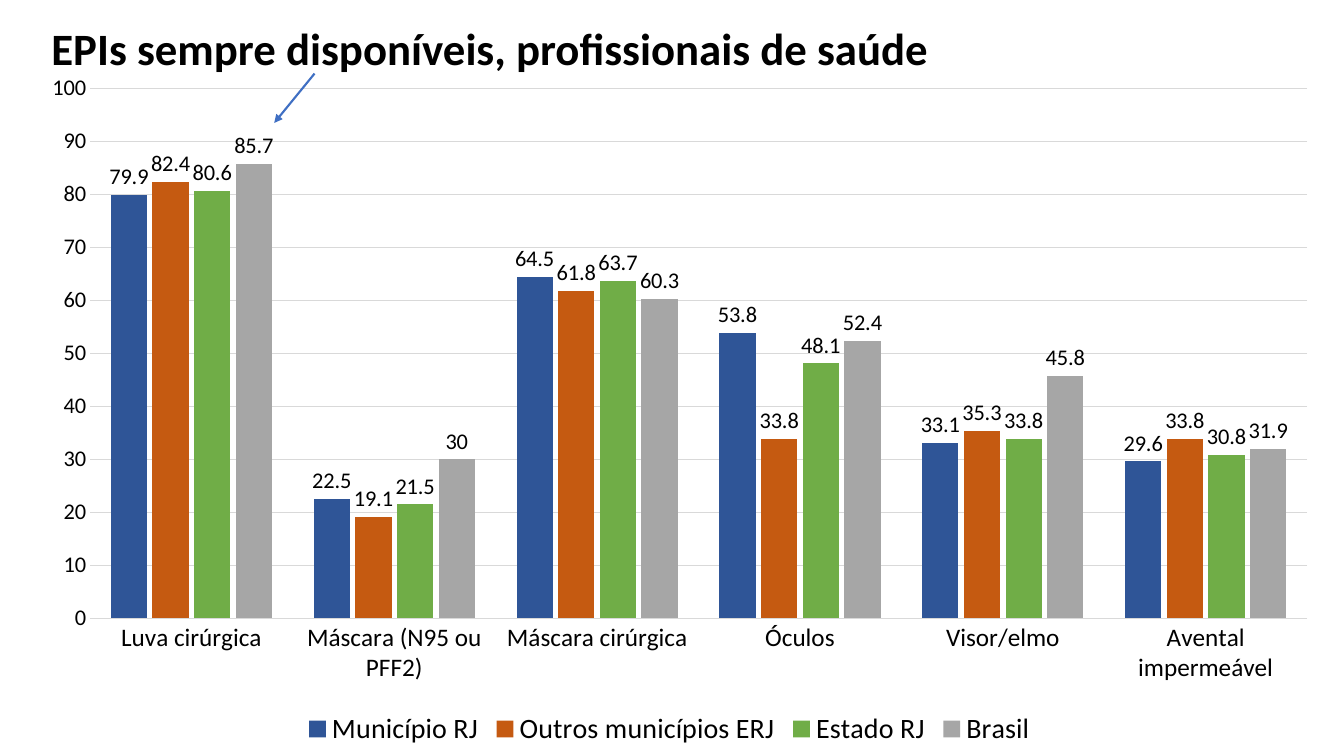
from dataclasses import dataclass

from lxml import etree
from pptx import Presentation
from pptx.chart.chart import Chart
from pptx.chart.data import CategoryChartData
from pptx.dml.color import RGBColor
from pptx.enum.chart import XL_CHART_TYPE, XL_LABEL_POSITION, XL_LEGEND_POSITION, XL_TICK_MARK
from pptx.enum.shapes import MSO_CONNECTOR
from pptx.enum.text import MSO_ANCHOR, MSO_AUTO_SIZE, PP_ALIGN
from pptx.oxml.ns import qn
from pptx.slide import Slide
from pptx.text.text import Font
from pptx.util import Inches, Pt

CLUSTERED = XL_CHART_TYPE.COLUMN_CLUSTERED
OUTSIDE_END = XL_LABEL_POSITION.OUTSIDE_END
BOTTOM = XL_LEGEND_POSITION.BOTTOM
NO_TICK = XL_TICK_MARK.NONE
STRAIGHT = MSO_CONNECTOR.STRAIGHT
MIDDLE = MSO_ANCHOR.MIDDLE
LEFT = PP_ALIGN.LEFT
NO_AUTOFIT = MSO_AUTO_SIZE.NONE

TITLE_ONLY = 5
FONT = "Calibri"
BLACK = "000000"
GRID_GREY = "D9D9D9"
ARROW_BLUE = "3F6FC3"


@dataclass(frozen=True)
class Region:
    name: str
    color: str
    percentages: tuple[float, ...]


EQUIPMENT = ("Luva cirúrgica", "Máscara (N95 ou PFF2)", "Máscara cirúrgica",
             "Óculos", "Visor/elmo", "Avental impermeável")
REGIONS = (
    Region("Município RJ", "2F5597", (79.9, 22.5, 64.5, 53.8, 33.1, 29.6)),
    Region("Outros municípios ERJ", "C55A11", (82.4, 19.1, 61.8, 33.8, 35.3, 33.8)),
    Region("Estado RJ", "70AD47", (80.6, 21.5, 63.7, 48.1, 33.8, 30.8)),
    Region("Brasil", "A6A6A6", (85.7, 30, 60.3, 52.4, 45.8, 31.9)),
)
PLOT_AREA = {"x": 0.047, "y": 0.022, "w": 0.954, "h": 0.781}


def rgb(color: str) -> RGBColor:
    return RGBColor.from_string(color)


def style_font(font: Font, size: float, bold: bool = False) -> None:
    font.name = FONT
    font.size = Pt(size)
    font.bold = bold
    font.color.rgb = rgb(BLACK)


def add_title(slide: Slide, wording: str) -> None:
    title = slide.shapes.title
    title.left, title.top = Inches(0.41), Inches(-0.22)
    title.width, title.height = Inches(10.33), Inches(1.45)
    frame = title.text_frame
    frame.word_wrap = True
    frame.auto_size = NO_AUTOFIT
    frame.vertical_anchor = MIDDLE
    paragraph = frame.paragraphs[0]
    paragraph.alignment = LEFT
    paragraph.line_spacing = 0.9
    run = paragraph.add_run()
    run.text = wording
    style_font(run.font, 32, bold=True)


def place_plot_area(chart: Chart) -> None:
    """Fix the inner plot area as fractions of the chart."""
    plot_area = chart.plots[0]._element.getparent()
    for automatic in plot_area.findall(qn("c:layout")):
        plot_area.remove(automatic)
    layout = etree.Element(qn("c:layout"))
    manual = etree.SubElement(layout, qn("c:manualLayout"))
    settings = {"layoutTarget": "inner", "xMode": "edge", "yMode": "edge", **PLOT_AREA}
    for tag, setting in settings.items():
        etree.SubElement(manual, qn(f"c:{tag}"), val=str(setting))
    plot_area.insert(0, layout)


def style_axes(chart: Chart) -> None:
    equipment_axis, percent_axis = chart.category_axis, chart.value_axis
    for axis, size in ((equipment_axis, 18), (percent_axis, 16)):
        axis.major_tick_mark = axis.minor_tick_mark = NO_TICK
        style_font(axis.tick_labels.font, size)
    percent_axis.minimum_scale, percent_axis.maximum_scale = 0, 100
    percent_axis.major_unit = 10
    percent_axis.format.line.fill.background()
    percent_axis.has_major_gridlines = True
    for line in (equipment_axis.format.line, percent_axis.major_gridlines.format.line):
        line.color.rgb = rgb(GRID_GREY)
        line.width = Pt(0.75)


def add_availability_chart(slide: Slide) -> None:
    data = CategoryChartData()
    data.categories = EQUIPMENT
    for region in REGIONS:
        data.add_series(region.name, region.percentages)
    chart = slide.shapes.add_chart(CLUSTERED, Inches(0.31), Inches(0.73),
                                   Inches(12.66), Inches(6.73), data).chart
    chart.has_title = False
    style_font(chart.font, 10)
    chart.has_legend = True
    chart.legend.position = BOTTOM
    chart.legend.include_in_layout = False
    style_font(chart.legend.font, 20)
    style_axes(chart)
    place_plot_area(chart)

    columns = chart.plots[0]
    columns.vary_by_categories = False
    columns.gap_width = 115
    columns.overlap = -15
    for series, region in zip(columns.series, REGIONS):
        series.invert_if_negative = False
        series.format.fill.solid()
        series.format.fill.fore_color.rgb = rgb(region.color)
        labels = series.data_labels
        labels.show_value = True
        labels.position = OUTSIDE_END
        style_font(labels.font, 16)


def add_arrow(slide: Slide) -> None:
    arrow = slide.shapes.add_connector(STRAIGHT, Inches(3.12), Inches(0.73),
                                       Inches(2.72), Inches(1.22))
    arrow.line.color.rgb = rgb(ARROW_BLUE)
    arrow.line.width = Pt(1.5)
    etree.SubElement(arrow.line._get_or_add_ln(), qn("a:tailEnd"), type="triangle")
    etree.SubElement(arrow._element.spPr, qn("a:effectLst"))


def main() -> None:
    presentation = Presentation()
    presentation.slide_width, presentation.slide_height = Inches(13.33), Inches(7.5)
    slide = presentation.slides.add_slide(presentation.slide_layouts[TITLE_ONLY])
    add_title(slide, "EPIs sempre disponíveis, profissionais de saúde")
    add_availability_chart(slide)
    add_arrow(slide)
    presentation.save("out.pptx")


if __name__ == "__main__":
    main()
